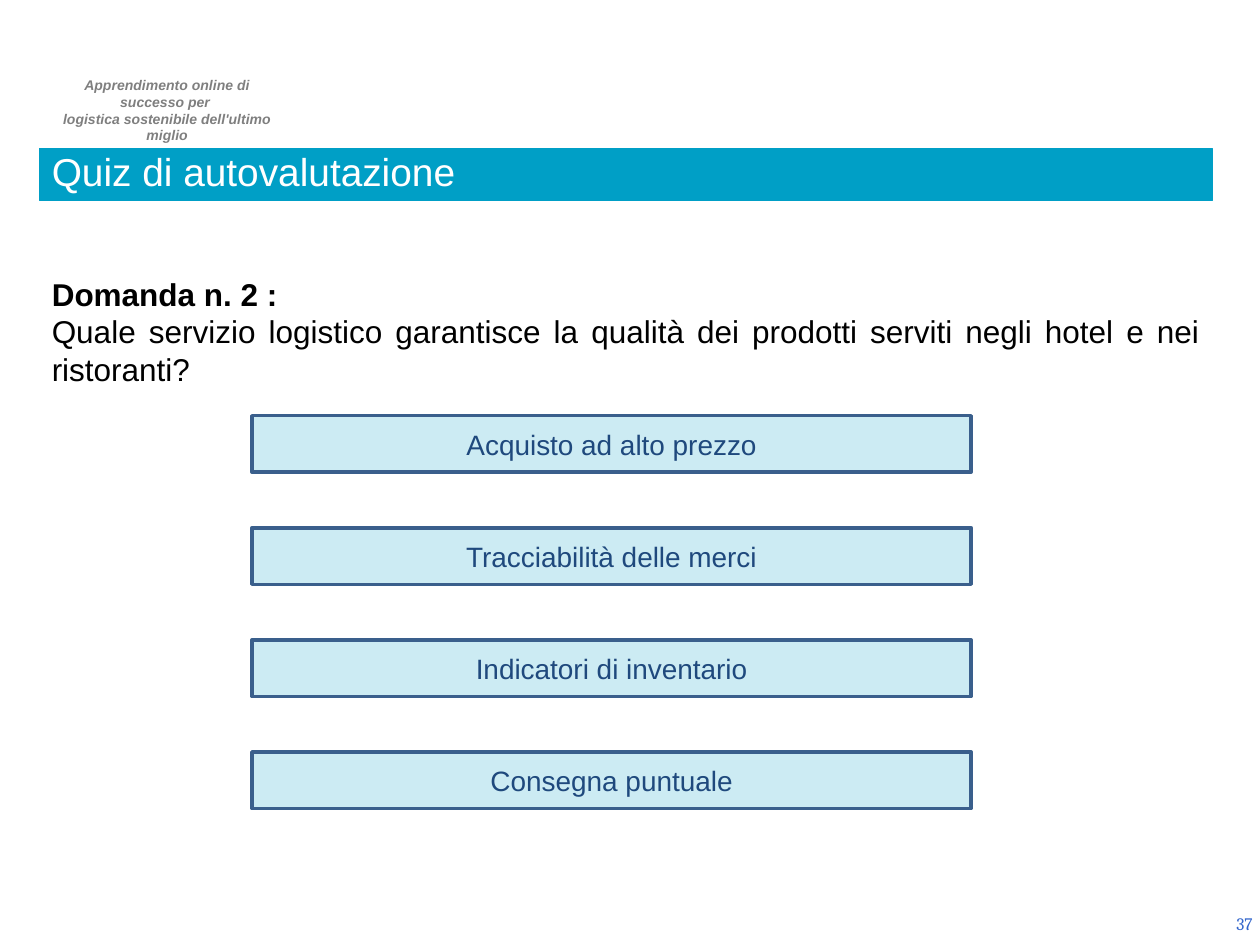
from lxml.etree import SubElement
from pptx import Presentation
from pptx.dml.color import RGBColor
from pptx.enum.shapes import MSO_SHAPE
from pptx.enum.text import MSO_ANCHOR, MSO_AUTO_SIZE, PP_ALIGN
from pptx.oxml.ns import qn
from pptx.util import Cm, Pt

COLORS = {
    "accent": "009FC6",
    "border": "3A5F8C",
    "answer": "1F497D",
    "header": "7F7F7F",
    "number": "3366CC",
    "white": "FFFFFF",
    "black": "000000",
}
ANSWERS = [
    "Acquisto ad alto prezzo",
    "Tracciabilità delle merci",
    "Indicatori di inventario",
    "Consegna puntuale",
]


def color(name):
    return RGBColor.from_string(COLORS[name])


def place(sp, box):
    for name, value in zip(("left", "top", "width", "height"), box):
        setattr(sp, name, Cm(value))


def write(p, text, align, ink, size, font="Arial", margin=0, indent=0, **formats):
    """Fill a paragraph with one run, without a bullet; margins are in cm."""
    p.alignment = align
    p.space_before = Pt(0)
    pPr = p._p.get_or_add_pPr()
    pPr.set("marL", str(Cm(margin)))
    pPr.set("indent", str(Cm(indent)))
    SubElement(pPr, qn("a:buNone"))
    r = p.add_run()
    r.text = text
    r.font.color.rgb = color(ink)
    for name, value in {"name": font, "size": Pt(size), **formats}.items():
        setattr(r.font, name, value)


def set_frame(tf, anchor):
    formats = {"word_wrap": True, "auto_size": MSO_AUTO_SIZE.NONE,
               "vertical_anchor": anchor}
    for name, value in formats.items():
        setattr(tf, name, value)


def add_text_box(s, box, anchor):
    sp = s.shapes.add_textbox(*map(Cm, box))
    set_frame(sp.text_frame, anchor)
    return sp.text_frame


def add_header(s, box):
    tf = add_text_box(s, box, MSO_ANCHOR.TOP)
    lines = ["Apprendimento online di successo per ",
             "logistica sostenibile dell'ultimo miglio"]
    for i, line in enumerate(lines):
        p = tf.add_paragraph() if i else tf.paragraphs[0]
        write(p, line, PP_ALIGN.CENTER, "header", 8, margin=0.1,
              bold=True, italic=True)


def add_page_number(s, box):
    tf = add_text_box(s, box, MSO_ANCHOR.MIDDLE)
    write(tf.paragraphs[0], "37", PP_ALIGN.RIGHT, "number", 10, font="Cambria")


def fill_title(s, box):
    sp = s.shapes.title
    place(sp, box)
    sp.fill.solid()
    sp.fill.fore_color.rgb = color("accent")
    sp.line.color.rgb = color("accent")
    sp.line.width = Pt(0.75)
    set_frame(sp.text_frame, MSO_ANCHOR.BOTTOM)
    p = sp.text_frame.paragraphs[0]
    write(p, "Quiz di autovalutazione", PP_ALIGN.LEFT, "white", 22.2,
          margin=2.06, indent=-2.06)
    p.line_spacing = 0.8


def fill_question(s, box):
    sp = s.placeholders[1]
    place(sp, box)
    tf = sp.text_frame
    set_frame(tf, MSO_ANCHOR.TOP)
    write(tf.paragraphs[0], "Domanda n. 2 :", PP_ALIGN.LEFT, "black", 18, bold=True)
    write(tf.add_paragraph(),
          "Quale servizio logistico garantisce la qualità dei prodotti serviti "
          "negli hotel e nei ristoranti?", PP_ALIGN.JUSTIFY, "black", 18)


def add_answers(s, box, height=1.14):
    """Spread the answer bars evenly from the top to the bottom of the box."""
    left, top, width, total = box
    pitch = (total - height) / (len(ANSWERS) - 1)
    for i, answer in enumerate(ANSWERS):
        sp = s.shapes.add_shape(MSO_SHAPE.RECTANGLE, Cm(left), Cm(top + i * pitch),
                                Cm(width), Cm(height))
        sp.shadow.inherit = False
        sp.fill.solid()
        sp.fill.fore_color.rgb = color("accent")
        srgb = sp._element.spPr.find(qn("a:solidFill")).find(qn("a:srgbClr"))
        SubElement(srgb, qn("a:alpha"), val="20000")
        sp.line.color.rgb = color("border")
        sp.line.width = Pt(2)
        set_frame(sp.text_frame, MSO_ANCHOR.MIDDLE)
        write(sp.text_frame.paragraphs[0], answer, PP_ALIGN.CENTER, "answer", 16)


def main():
    prs = Presentation()
    prs.slide_width, prs.slide_height = Cm(25.4), Cm(19.05)
    s = prs.slides.add_slide(prs.slide_layouts[1])
    add_header(s, (0.74, 1.42, 5.16, 0.94))
    add_page_number(s, (19.58, 18.11, 5.92, 1.02))
    fill_title(s, (0.79, 3, 23.65, 1.04))
    fill_question(s, (0.79, 5.41, 23.65, 2.57))
    add_answers(s, (5.08, 8.38, 14.5, 7.92))
    prs.save("out.pptx")


if __name__ == "__main__":
    main()
